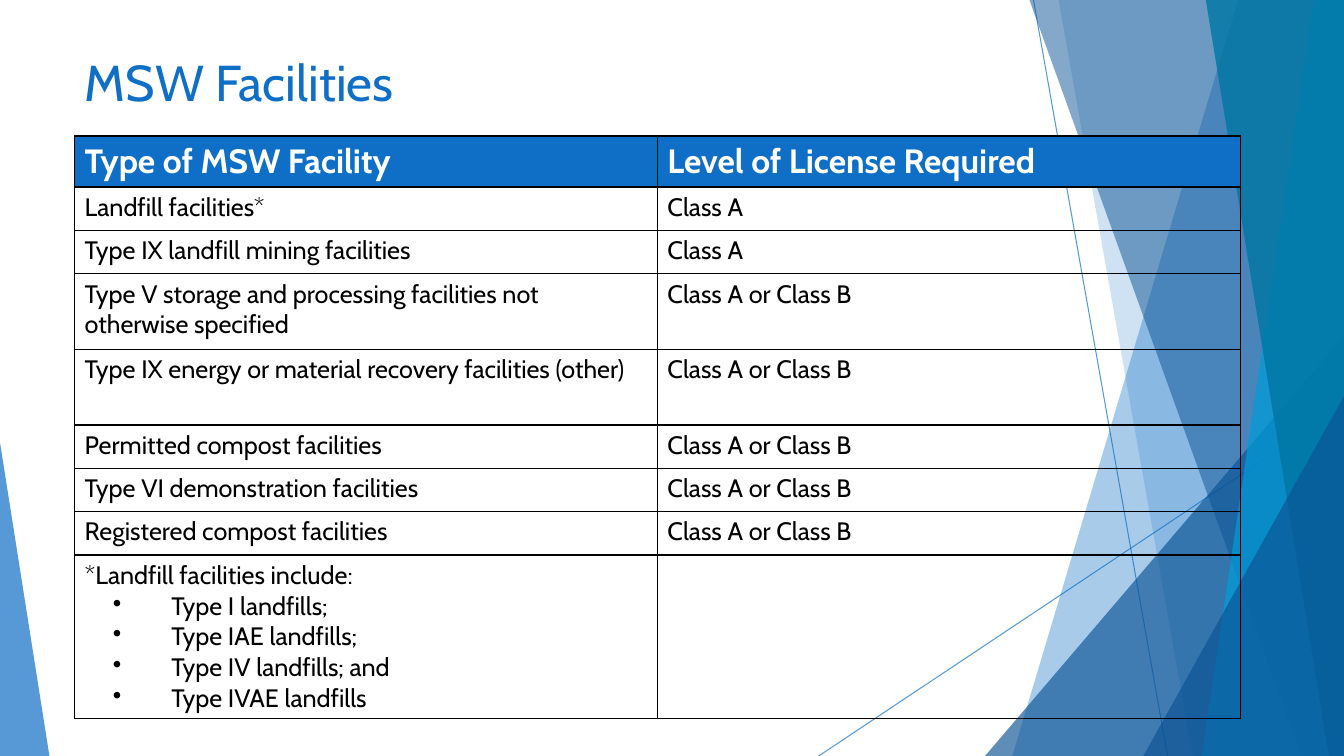
from pptx import Presentation
from pptx.dml.color import RGBColor
from pptx.enum.shapes import MSO_CONNECTOR, MSO_SHAPE
from pptx.enum.text import MSO_ANCHOR, PP_ALIGN
from pptx.oxml.ns import qn
from pptx.util import Inches, Pt
from lxml import etree

STRAIGHT = MSO_CONNECTOR.STRAIGHT
TRIANGLE = MSO_SHAPE.ISOSCELES_TRIANGLE
MIDDLE, LEFT = MSO_ANCHOR.MIDDLE, PP_ALIGN.LEFT
FONT = "Cabin"
COLORS = {"blue": "0F6FC6", "navy": "0B5394", "cyan": "009DD9",
          "teal": "0076A3", "black": "000000", "white": "FFFFFF"}
WIDTH, HEIGHT = 13.33, 7.5


def paint(fill, shape, color, opacity):
    """Fill with a colour and make it see-through by an opacity in percent."""
    fill.solid()
    fill.fore_color.rgb = RGBColor.from_string(COLORS[color])
    for node in shape._element.spPr.iter(qn("a:srgbClr")):
        etree.SubElement(node, qn("a:alpha"), val=str(opacity * 1000))


def format_runs(paragraph, size, color, bold=False):
    paragraph.alignment = LEFT
    for run in paragraph.runs:
        run.font.name = FONT
        run.font.size = Pt(size)
        run.font.bold = bold
        run.font.color.rgb = RGBColor.from_string(COLORS[color])


presentation = Presentation()
presentation.slide_width = Inches(WIDTH)
presentation.slide_height = Inches(HEIGHT)
slide = presentation.slides.add_slide(presentation.slide_layouts[5])
shapes = slide.shapes

# Thin lines behind the facets
for x1, y1, x2, y2 in [(10.25, 0, 11.58, HEIGHT), (WIDTH, 4.03, 8.12, HEIGHT)]:
    line = shapes.add_connector(STRAIGHT, Inches(x1), Inches(y1), Inches(x2), Inches(y2))
    line.line.width = Pt(0.75)
    paint(line.line.fill, line, "blue", 70)
    etree.SubElement(line._element.spPr, qn("a:effectLst"))

# Bands run from their slanted left edge (top x, bottom x) to the right slide edge;
# triangles stand on the bottom edge (left, width, height, apex)
facets = [
    ("band", (12.28, 10.04), "blue", 36),
    ("band", (10.5, 11.83), "blue", 20),
    ("triangle", (9.77, 3.56, 4.17, 1), "navy", 66),
    ("band", (10.21, 12.91), "navy", 50),
    ("band", (13.03, 11.92), "cyan", 70),
    ("band", (11.96, 13.18), "teal", 80),
    ("triangle", (11.34, 1.99, 3.57, 1), "navy", 66),
    ("triangle", (0, 0.49, 3.11, 0), "blue", 70),
]
for kind, geometry, color, opacity in facets:
    if kind == "band":
        top_x, bottom_x = geometry
        builder = shapes.build_freeform(Inches(top_x), 0)
        corners = [(WIDTH, 0), (WIDTH, HEIGHT), (bottom_x, HEIGHT)]
        builder.add_line_segments([(Inches(x), Inches(y)) for x, y in corners], close=True)
        facet = builder.convert_to_shape()
    else:
        left, width, height, apex = geometry
        facet = shapes.add_shape(TRIANGLE, Inches(left), Inches(HEIGHT - height),
                                 Inches(width), Inches(height))
        facet.adjustments[0] = apex
    paint(facet.fill, facet, color, opacity)
    facet.line.fill.background()
    facet.shadow.inherit = False

# Title
title = shapes.title
title.left, title.top = Inches(0.74), Inches(0.46)
title.width, title.height = Inches(9.4), Inches(0.69)
title.text_frame.text = "MSW Facilities"
title.text_frame.vertical_anchor = MIDDLE
format_runs(title.text_frame.paragraphs[0], 36, "blue")

# Table
either_class = "Class A or Class B"
rows = [
    (0.5, "Type of MSW Facility", "Level of License Required"),
    (0.43, "Landfill facilities*", "Class A"),
    (0.43, "Type IX landfill mining facilities", "Class A"),
    (0.75, "Type V storage and processing facilities not otherwise specified", either_class),
    (0.75, "Type IX energy or material recovery facilities (other)", either_class),
    (0.43, "Permitted compost facilities", either_class),
    (0.43, "Type VI demonstration facilities", either_class),
    (0.43, "Registered compost facilities", either_class),
    (1.62, "*Landfill facilities include:\nType I landfills;\nType IAE landfills;\n"
           "Type IV landfills; and\nType IVAE landfills", ""),
]
table = shapes.add_table(len(rows), 2, Inches(0.74), Inches(1.35), Inches(11.56),
                         Inches(sum(row[0] for row in rows))).table
table.horz_banding = False
for row_index, (row_height, *texts) in enumerate(rows):
    table.rows[row_index].height = Inches(row_height)
    is_header = row_index == 0
    for column_index, text in enumerate(texts):
        cell = table.cell(row_index, column_index)
        cell.text_frame.text = text
        if is_header:
            cell.fill.solid()
            cell.fill.fore_color.rgb = RGBColor.from_string(COLORS["blue"])
        else:
            cell.fill.background()
        for paragraph_index, paragraph in enumerate(cell.text_frame.paragraphs):
            format_runs(paragraph, 24 if is_header else 18,
                        "white" if is_header else "black", is_header)
            if paragraph_index > 0:
                properties = paragraph._p.get_or_add_pPr()
                properties.set("marL", str(Inches(0.86)))
                properties.set("indent", str(Inches(-0.58)))
                etree.SubElement(properties, qn("a:buChar"), char="•")
        cell_properties = cell._tc.get_or_add_tcPr()
        for position, side in enumerate(("lnL", "lnR", "lnT", "lnB")):
            border = etree.Element(qn(f"a:{side}"), w=str(Pt(1)))
            border_fill = etree.SubElement(border, qn("a:solidFill"))
            etree.SubElement(border_fill, qn("a:srgbClr"), val=COLORS["black"])
            cell_properties.insert(position, border)

presentation.save("out.pptx")
